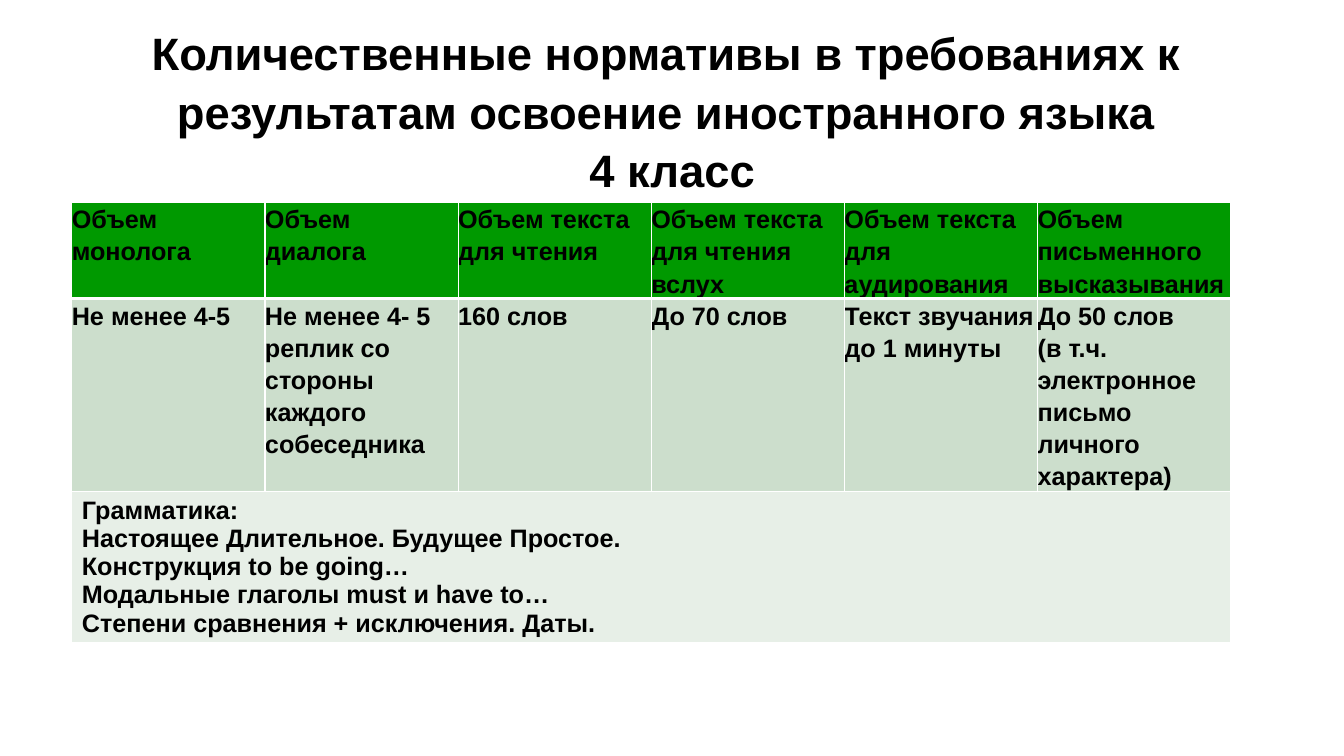
import pptx
import pptx.util
import pptx.dml.color
import pptx.enum.text
import pptx.oxml
import pptx.oxml.ns
from lxml import etree

Cm, Pt = pptx.util.Cm, pptx.util.Pt
COLORS = {"text": "000000", "border": "FFFFFF", "header": "009900",
          "norms": "CCDECC", "grammar": "E7EFE7"}
TITLE = ("Количественные нормативы в требованиях к \v"
         "результатам освоение иностранного языка \v4 класс")
HEADERS = ["Объем монолога", "Объем диалога", "Объем текста для чтения",
           "Объем текста для чтения вслух", "Объем текста для аудирования",
           "Объем письменного высказывания"]
NORMS = ["Не менее 4-5", "Не менее 4- 5 реплик со стороны каждого собеседника",
         "160 слов", "До 70 слов", "Текст звучания до 1 минуты",
         "До 50 слов\n(в т.ч. электронное письмо личного характера)"]
GRAMMAR = ("Грамматика:\nНастоящее Длительное. Будущее Простое.\n"
           "Конструкция to be going…\nМодальные глаголы must и have to…\n"
           "Степени сравнения + исключения. Даты.")
ROW_HEIGHTS = [2.41, 4.86, 3.8]


def rgb(name):
    return pptx.dml.color.RGBColor.from_string(COLORS[name])


def format_text(tf, size, spacing):
    for p in tf.paragraphs:
        p.line_spacing = spacing
        for r in p.runs:
            r.font.name = "Arial"
            r.font.size = Pt(size)
            r.font.bold = True
            r.font.color.rgb = rgb("text")


def set_borders(cell, bottom):
    tc_pr = cell._tc.get_or_add_tcPr()
    widths = {"lnL": 1, "lnR": 1, "lnT": 1, "lnB": bottom}
    for i, (side, width) in enumerate(widths.items()):
        ln = etree.Element(pptx.oxml.ns.qn("a:" + side), w=str(Pt(width)))
        fill = etree.SubElement(ln, pptx.oxml.ns.qn("a:solidFill"))
        etree.SubElement(fill, pptx.oxml.ns.qn("a:srgbClr"), val=COLORS["border"])
        tc_pr.insert(i, ln)


def fill_cell(cell, text, color, spacing=1.14, inset=False, bottom=1):
    cell.text_frame.text = text
    format_text(cell.text_frame, 18, spacing)
    if not inset:
        cell.margin_left = cell.margin_right = 0
        cell.margin_top = cell.margin_bottom = 0
    cell.fill.solid()
    cell.fill.fore_color.rgb = rgb(color)
    set_borders(cell, bottom)


def add_title(s, x, y, w, h):
    sp = s.shapes.title
    sp.left, sp.top, sp.width, sp.height = Cm(x), Cm(y), Cm(w), Cm(h)
    tf = sp.text_frame
    tf.text = TITLE
    tf.word_wrap = True
    tf.auto_size = pptx.enum.text.MSO_AUTO_SIZE.NONE
    tf.vertical_anchor = pptx.enum.text.MSO_ANCHOR.MIDDLE
    tf.margin_top = tf.margin_bottom = 0
    tf.paragraphs[0].alignment = pptx.enum.text.PP_ALIGN.CENTER
    format_text(tf, 32.4, 1.08)


def add_norms_table(s, x, y, w):
    count = len(HEADERS)
    table = s.shapes.add_table(len(ROW_HEIGHTS), count, Cm(x), Cm(y),
                               Cm(w), Cm(sum(ROW_HEIGHTS))).table
    for row, height in zip(table.rows, ROW_HEIGHTS):
        row.height = Cm(height)
    for i, (header, norm) in enumerate(zip(HEADERS, NORMS)):
        table.columns[i].width = Cm(w / count)
        fill_cell(table.cell(0, i), header, "header", bottom=3)
        fill_cell(table.cell(1, i), norm, "norms")
    table.cell(2, 0).merge(table.cell(2, count - 1))
    fill_cell(table.cell(2, 0), GRAMMAR, "grammar", spacing=1.0, inset=True)


def main():
    prs = pptx.Presentation()
    prs.slide_width, prs.slide_height = Cm(33.87), Cm(19.05)
    s = prs.slides.add_slide(prs.slide_layouts[5])
    add_title(s, 1.7, 0.68, 30.48, 4.12)
    add_norms_table(s, 1.81, 5.09, 29.21)
    prs.save("out.pptx")


if __name__ == "__main__":
    main()
